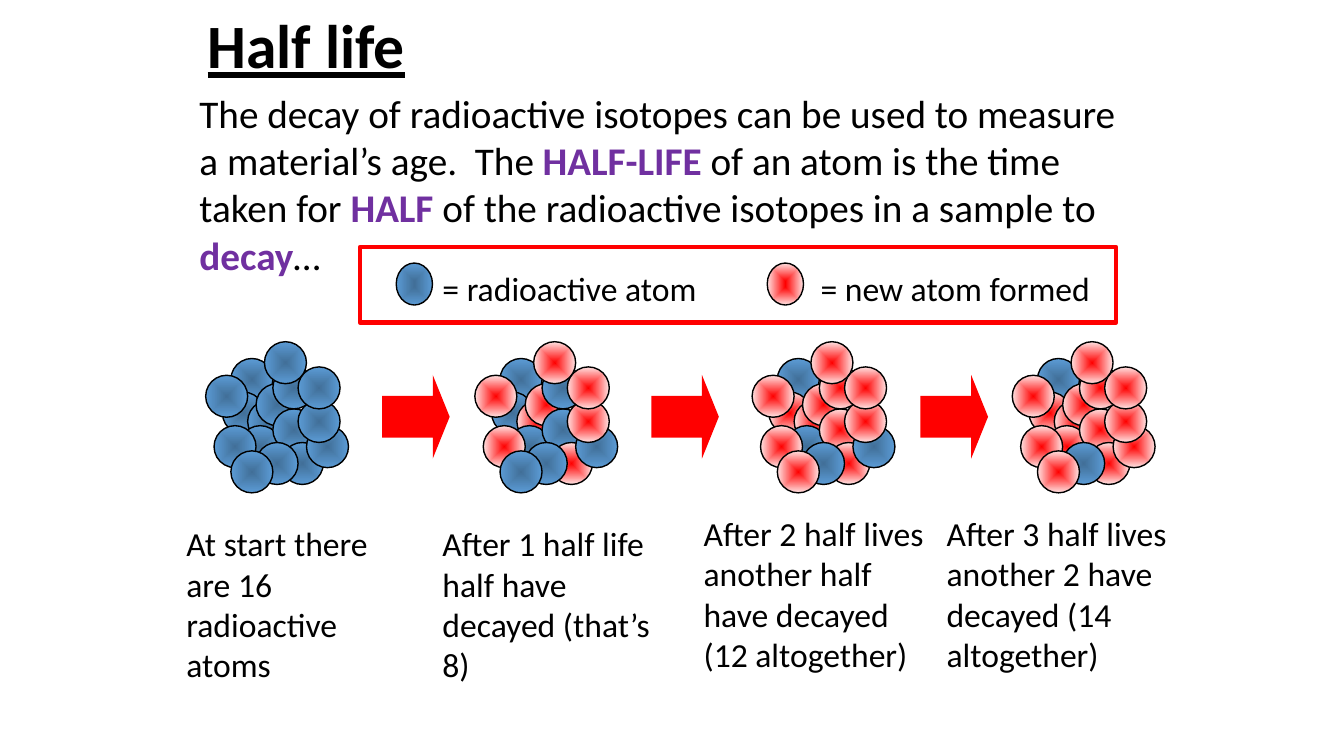
from lxml import etree
from pptx import Presentation
from pptx.dml.color import RGBColor
from pptx.enum.shapes import MSO_SHAPE
from pptx.enum.text import MSO_ANCHOR, MSO_AUTO_SIZE, PP_ALIGN
from pptx.oxml.ns import qn
from pptx.util import Inches, Pt

OVAL, ARROW, RECT = MSO_SHAPE.OVAL, MSO_SHAPE.RIGHT_ARROW, MSO_SHAPE.RECTANGLE
LEFT, MIDDLE, GROW = PP_ALIGN.LEFT, MSO_ANCHOR.MIDDLE, MSO_AUTO_SIZE.SHAPE_TO_FIT_TEXT

# Content
FONT = "Calibri"
COLORS = {"text": "000000", "key": "7030A0", "red": "FF0000"}
ATOM_COLORS = {"radioactive": ("416F98", "5B9BD5"), "new": ("FF0000", "FFE2E2")}

TITLE = "Half life"
DEFINITION = [  # (words, is key term)
    ("The decay of radioactive isotopes can be used to measure a material’s age.  The ", False),
    ("HALF-LIFE", True),
    (" of an atom is the time taken for ", False),
    ("HALF", True),
    (" of the radioactive isotopes in a sample to ", False),
    ("decay", True),
    ("…", False),
]
LEGEND = [  # atom kind, atom left, label, label left, label width
    ("new", 7.61, "= new atom formed", 8.04, 3.39),
    ("radioactive", 3.93, "= radioactive atom", 4.29, 3.03),
]
# Atom places inside a cluster, in grid steps, from back to front
ATOM_GRID = [(3, 2), (2, 6), (5, 7), (6, 5), (4, 10), (0, 4), (1, 10), (8, 8),
             (9, 12), (12, 10), (8, 3), (11, 7), (6, 12), (11, 3), (7, 0), (3, 13)]
STAGES = [  # cluster left, atoms still radioactive, caption, caption left, caption top
    (2.04, set(range(16)), "At start there are 16 radioactive atoms", 1.75, 5.14),
    (4.71, {0, 1, 4, 7, 9, 10, 12, 15},
     "After 1 half life half have decayed (that’s 8)", 4.29, 5.14),
    (7.46, {0, 4, 9, 12},
     "After 2 half lives another half have decayed (12 altogether)", 6.88, 5.04),
    (10.04, {0, 12},
     "After 3 half lives another 2 have decayed (14 altogether)", 9.29, 5.04),
]

# Layout, in inches
GRID_STEP = 1 / 12
ATOM_SIZE = 5 * GRID_STEP
CLUSTER_TOP = 3.39
ARROW_LEFT, ARROW_PITCH = 3.79, 2.67
LEGEND_TOP = 2.61


def rgb(name):
    return RGBColor.from_string(COLORS[name])


def box(left, top, width, height):
    return [Inches(v) for v in (left, top, width, height)]


def add_text(parent, place, runs, size):
    frame = parent.add_textbox(*box(*place)).text_frame
    frame.word_wrap = True
    frame.auto_size = GROW
    paragraph = frame.paragraphs[0]
    paragraph.font.name, paragraph.font.size = FONT, Pt(size)
    for words, is_key in runs:
        run = paragraph.add_run()
        run.text = words
        run.font.bold = is_key
        run.font.color.rgb = rgb("key" if is_key else "text")


def add_atom(parent, kind, left, top, width=ATOM_SIZE):
    atom = parent.add_shape(OVAL, *box(left, top, width, ATOM_SIZE))
    atom.shadow.inherit = False
    atom.line.color.rgb = rgb("text")
    atom.line.width = Pt(1)
    atom.fill.gradient()
    for stop, color in zip(atom.fill.gradient_stops, ATOM_COLORS[kind]):
        stop.color.rgb = RGBColor.from_string(color)
    # Radiate the gradient from the centre
    gradient = atom.element.spPr.find(qn("a:gradFill"))
    gradient.remove(gradient.find(qn("a:lin")))
    radial = etree.SubElement(gradient, qn("a:path"), {"path": "shape"})
    etree.SubElement(radial, qn("a:fillToRect"), dict.fromkeys("ltrb", "50000"))


prs = Presentation()
prs.slide_width, prs.slide_height = Inches(13.33), Inches(7.5)
slide = prs.slides.add_slide(prs.slide_layouts[5])
shapes = slide.shapes

# Title
title = shapes.title
title.left, title.top, title.width, title.height = box(1.96, -0.01, 9, 0.99)
title.text_frame.text = TITLE
title.text_frame.vertical_anchor = MIDDLE
heading = title.text_frame.paragraphs[0]
heading.alignment, heading.line_spacing = LEFT, 0.9
heading.font.name, heading.font.size = FONT, Pt(44)
heading.font.bold = heading.font.underline = True
heading.font.color.rgb = rgb("text")

# Definition
add_text(shapes, (1.88, 0.84, 9.54, 1.99), DEFINITION, 28)

# Atom clusters with captions
for cluster_left, radioactive, caption, caption_left, caption_top in STAGES:
    cluster = shapes.add_group_shape().shapes
    for index, (column, row) in enumerate(ATOM_GRID):
        add_atom(cluster, "radioactive" if index in radioactive else "new",
                 cluster_left + column * GRID_STEP, CLUSTER_TOP + row * GRID_STEP)
    add_text(shapes, (caption_left, caption_top, 2.42, 1.72), [(caption, False)], 24)

# Arrows between stages
for step in range(len(STAGES) - 1):
    arrow = shapes.add_shape(ARROW, *box(ARROW_LEFT + step * ARROW_PITCH, 3.72, 0.67, 0.83))
    arrow.adjustments[0], arrow.adjustments[1] = 0.5, 0.25
    arrow.shadow.inherit = False
    arrow.fill.solid()
    arrow.fill.fore_color.rgb = rgb("red")
    arrow.line.fill.background()

# Legend
legend = shapes.add_group_shape().shapes
for kind, atom_left, label, label_left, label_width in LEGEND:
    add_atom(legend, kind, atom_left, LEGEND_TOP, 0.36)
    add_text(legend, (label_left, LEGEND_TOP, label_width, 0.5), [(label, False)], 24)
border = legend.add_shape(RECT, *box(3.57, 2.45, 7.5, 0.75))
border.shadow.inherit = False
border.fill.background()
border.line.color.rgb = rgb("red")
border.line.width = Pt(3)

prs.save("out.pptx")
